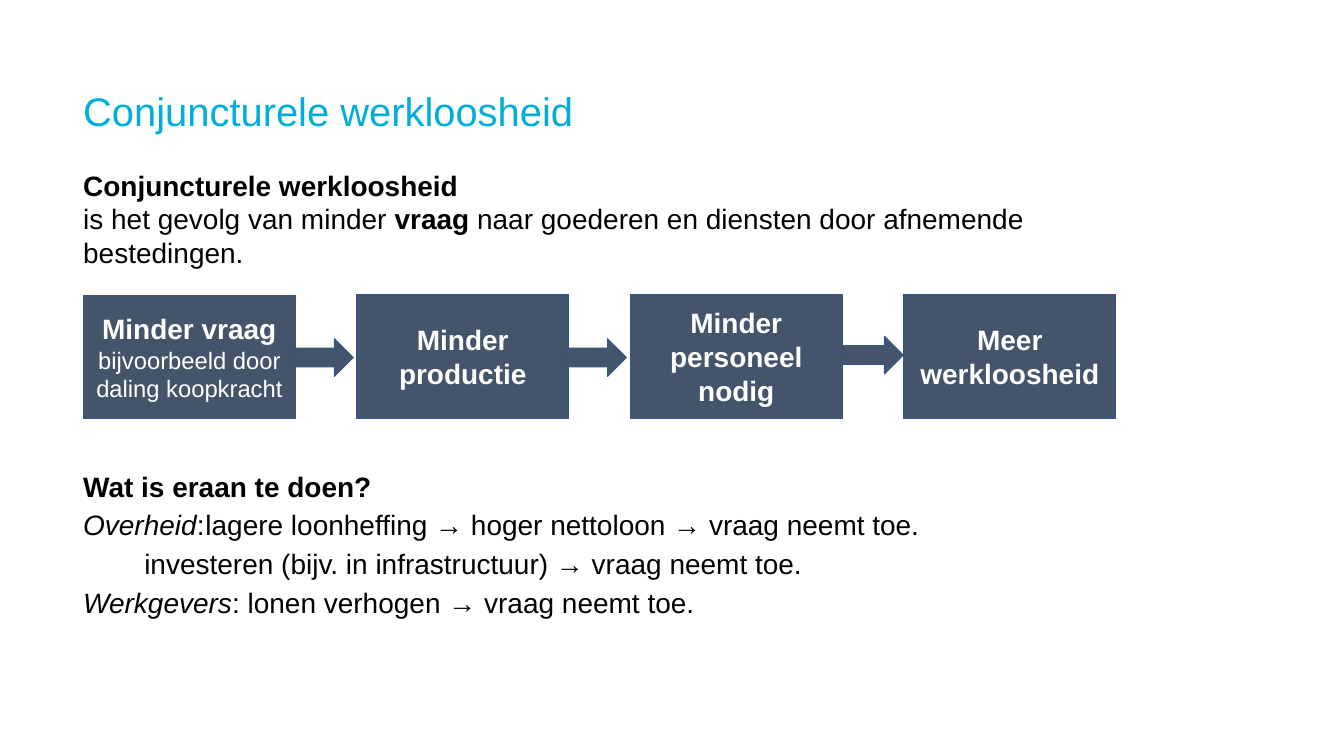
"""Build the slide on cyclical unemployment with its four-step flow."""
from pptx import Presentation
from pptx.dml.color import RGBColor
from pptx.enum.shapes import MSO_SHAPE
from pptx.enum.text import MSO_ANCHOR, MSO_AUTO_SIZE, PP_ALIGN
from pptx.oxml.ns import qn
from pptx.util import Pt
from lxml.etree import SubElement

CYAN = RGBColor(0x00, 0xAE, 0xDA)
BLACK = RGBColor(0x00, 0x00, 0x00)
WHITE = RGBColor(0xFF, 0xFF, 0xFF)
SLATE = RGBColor(0x44, 0x54, 0x6A)
BLUE = RGBColor(0x32, 0x54, 0x91)

LEFT = 98
STEP_PITCH = 322.2
STEP_WIDTH, STEP_HEIGHT = 250, 145.5

INTRO = [
    (0, None, [("Conjuncturele werkloosheid", "bold")]),
    (0, None, [("is het gevolg van minder ", ""), ("vraag", "bold"),
               (" naar goederen en diensten door afnemende bestedingen.", "")]),
]
REMEDIES = [
    (0, None, [("Wat is eraan te doen?", "bold")]),
    (6, 144, [("Overheid", "italic"),
              (":\tlagere loonheffing → hoger nettoloon → vraag neemt toe.", "")]),
    (6, 72, [("\tinvesteren (bijv. in infrastructuur) → vraag neemt toe.", "")]),
    (6, None, [("Werkgevers", "italic"), (": lonen verhogen → vraag neemt toe.", "")]),
]
STEPS = [
    (347.8, [("Minder vraag", 33, True), ("bijvoorbeeld door daling koopkracht", 28, False)]),
    (347, [("Minder productie", 33, True)]),
    (347, [("Minder personeel nodig", 33, True)]),
    (347, [("Meer werkloosheid", 33, True)]),
]
ARROWS = [(344.2, 398.9), (666, 398.9), (992.2, 396)]


def set_font(font, size, color):
    font.name = "Arial"
    font.size = Pt(size)
    font.color.rgb = color


def add_block(kind, left, top, width, height):
    block = page.shapes.add_shape(kind, Pt(left), Pt(top), Pt(width), Pt(height))
    block.shadow.inherit = False
    block.fill.solid()
    block.fill.fore_color.rgb = SLATE
    block.line.color.rgb = BLUE
    block.line.width = Pt(1)
    return block


deck = Presentation()
deck.slide_width, deck.slide_height = Pt(1583.3), Pt(890.6)
page = deck.slides.add_slide(deck.slide_layouts[5])

title = page.shapes.title
title.left, title.top, title.width, title.height = Pt(LEFT), Pt(98), Pt(1386), Pt(65.5)
frame = title.text_frame
frame.margin_left = frame.margin_top = frame.margin_right = frame.margin_bottom = 0
frame.auto_size = MSO_AUTO_SIZE.NONE
frame.vertical_anchor = MSO_ANCHOR.MIDDLE
frame.text = "Conjuncturele werkloosheid"
frame.paragraphs[0].alignment = PP_ALIGN.LEFT
set_font(frame.paragraphs[0].font, 47, CYAN)

for top, height, lines in [(198, 120), (552.6, 180)] and [(198, 120, INTRO), (552.6, 180, REMEDIES)]:
    box = page.shapes.add_textbox(Pt(LEFT), Pt(top), Pt(1163.5), Pt(height))
    frame = box.text_frame
    frame.word_wrap = True
    frame.margin_left = frame.margin_top = frame.margin_right = frame.margin_bottom = 0
    for number, (space, tab, spans) in enumerate(lines):
        para = frame.add_paragraph() if number else frame.paragraphs[0]
        para.space_before = Pt(space)
        if tab:
            tabs = SubElement(para._p.get_or_add_pPr(), qn("a:tabLst"))
            SubElement(tabs, qn("a:tab"), pos=str(Pt(tab)), algn="l")
        set_font(para.font, 33, BLACK)
        for words, style in spans:
            span = para.add_run()
            span.text = words
            span.font.bold = style == "bold"
            span.font.italic = style == "italic"

for column, (top, lines) in enumerate(STEPS):
    step = add_block(MSO_SHAPE.RECTANGLE, LEFT + column * STEP_PITCH, top, STEP_WIDTH, STEP_HEIGHT)
    frame = step.text_frame
    frame.word_wrap = True
    frame.vertical_anchor = MSO_ANCHOR.MIDDLE
    for number, (words, size, bold) in enumerate(lines):
        para = frame.add_paragraph() if number else frame.paragraphs[0]
        para.text = words
        para.alignment = PP_ALIGN.CENTER
        set_font(para.font, size, WHITE)
        para.font.bold = bold

for left, top in ARROWS:
    add_block(MSO_SHAPE.RIGHT_ARROW, left, top, 72, 44.6)

deck.save("out.pptx")
